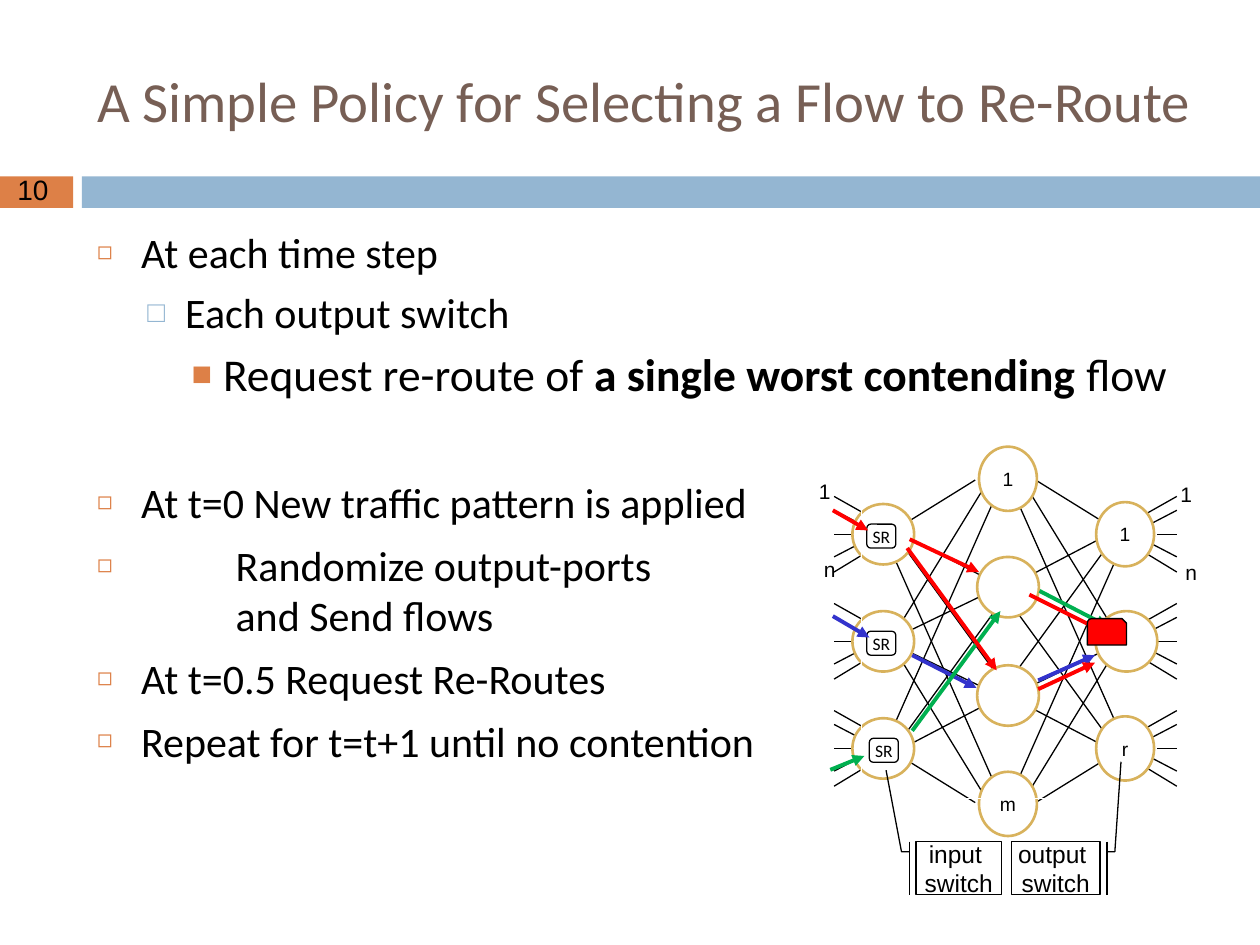
from dataclasses import dataclass
from itertools import product

from lxml.etree import SubElement
from pptx import Presentation
from pptx.dml.color import RGBColor
from pptx.enum.shapes import MSO_CONNECTOR, MSO_SHAPE
from pptx.enum.text import MSO_ANCHOR, MSO_AUTO_SIZE, PP_ALIGN
from pptx.oxml.ns import qn
from pptx.util import Inches, Pt

COLORS = {
    "black": "000000", "white": "FFFFFF", "brown": "775F55", "orange": "DD8047",
    "steel": "94B6D2", "gold": "D8B25C", "red": "FF0000", "blue": "3333CC",
    "green": "00B050",
}
AXIS_X, AXIS_Y = 7.98, 5.09
ROWS = [AXIS_Y + step * 0.85 for step in (-1, 0, 1)]


@dataclass
class Bullet:
    spans: list[tuple[str, bool]]
    left: float
    hang: float
    before: float
    mark: str = "◻"
    color: str = "orange"
    scale: int = 60
    level: int = 0
    size: float = 24


@dataclass
class Node:
    x: float
    y: float
    label: str = ""


@dataclass
class Flow:
    color: str
    start: tuple[float, float]
    end: tuple[float, float]


BULLETS = [
    Bullet([("At each time step", False)], 0.35, 0.35, 7),
    Bullet([("Each output switch", False)], 0.7, 0.3, 5.5, "□", "steel", 70, 1),
    Bullet([("Request re-route of ", False), ("a single worst contending ", True),
            ("flow", False)], 1, 0.25, 5, "■", "orange", 75, 2, 26),
    Bullet([("At t=0 New traffic pattern is applied", False)], 0.35, 0.35, 43.5),
    Bullet([("Randomize output-ports\nand Send flows", False)], 1.1, 1.1, 7),
    Bullet([("At t=0.5 Request Re-Routes", False)], 0.35, 0.35, 7),
    Bullet([("Repeat for t=t+1 until no contention", False)], 0.35, 0.35, 7),
]
PORT_LINES = [(-0.3, -0.17, 0.23), (-0.19, -0.07, 0.23), (0.3, 0.16, 0.23),
              (0.18, 0.06, 0.23), (0, 0, 0.16)]
QUARTER_LINKS = [
    (8.15, 3.87, 8.8, 4.93), (8.15, 4.72, 8.73, 5), (8.22, 3.81, 8.8, 4.17),
    (8.15, 4.58, 8.8, 4.24), (8.8, 4.32, 8.08, 5.31), (8.87, 4.41, 8.08, 6.19),
]
NODES = [
    Node(8, 3.8, "1"), Node(8, 4.66), Node(8, 5.52), Node(8, 6.38, "m"),
    *[Node(7.01, row) for row in ROWS],
    Node(8.93, ROWS[0], "1"), Node(8.94, ROWS[1]), Node(8.93, ROWS[2], "r"),
]
EARLY_FLOWS = [
    Flow("red", (6.61, 4.05), (6.89, 4.21)), Flow("blue", (6.61, 4.89), (6.9, 5.06)),
    Flow("green", (6.59, 6.11), (6.86, 6)), Flow("blue", (7.24, 5.2), (7.75, 5.46)),
    Flow("blue", (8.24, 5.4), (8.69, 5.2)), Flow("green", (7.24, 5.8), (7.94, 4.85)),
    Flow("green", (8.25, 4.69), (8.79, 4.97)), Flow("red", (7.22, 4.28), (7.77, 4.54)),
    Flow("red", (8.17, 4.72), (8.73, 5)),
]
REROUTED_FLOWS = [Flow("red", (7.2, 4.35), (7.91, 5.32)),
                  Flow("red", (8.24, 5.47), (8.69, 5.26))]


def rgb(name: str) -> RGBColor:
    return RGBColor.from_string(COLORS[name])


def write(paragraph, text: str, *, size: float, font="Arial", color="black",
          bold=False, align=None) -> None:
    if align is not None:
        paragraph.alignment = align
    for index, part in enumerate(text.split("\n")):
        if index:
            paragraph.add_line_break()
        span = paragraph.add_run()
        span.text = part
        span.font.size, span.font.name, span.font.bold = Pt(size), font, bold
        span.font.color.rgb = rgb(color)


def place(box, left: float, top: float, width: float, height: float) -> None:
    box.left, box.top = Inches(left), Inches(top)
    box.width, box.height = Inches(width), Inches(height)


def draw_shape(page, kind, left: float, top: float, width: float, height: float, *,
               fill=None, line=None, weight=0.75):
    shape = page.shapes.add_shape(kind, Inches(left), Inches(top),
                                  Inches(width), Inches(height))
    shape.shadow.inherit = False
    if fill:
        shape.fill.solid()
        shape.fill.fore_color.rgb = rgb(fill)
    else:
        shape.fill.background()
    if line:
        shape.line.color.rgb = rgb(line)
        shape.line.width = Pt(weight)
    else:
        shape.line.fill.background()
    shape.text_frame.vertical_anchor = MSO_ANCHOR.MIDDLE
    return shape


def draw_line(page, start, end, color="black", weight=0.75, arrow=False) -> None:
    line = page.shapes.add_connector(MSO_CONNECTOR.STRAIGHT,
                                     *[Inches(value) for value in (*start, *end)])
    line.line.color.rgb = rgb(color)
    line.line.width = Pt(weight)
    properties = line._element.spPr
    if arrow:
        SubElement(properties.find(qn("a:ln")), qn("a:tailEnd"), type="triangle")
    SubElement(properties, qn("a:effectLst"))


def draw_flows(page, flows: list[Flow]) -> None:
    for flow in flows:
        draw_line(page, flow.start, flow.end, flow.color, 2.25, True)


def draw_label(page, text: str, left: float, top: float, width: float,
               height: float, size: float) -> None:
    box = page.shapes.add_textbox(Inches(left), Inches(top), Inches(width), Inches(height))
    box.text_frame.word_wrap = False
    write(box.text_frame.paragraphs[0], text, size=size, align=PP_ALIGN.CENTER)


def fill_bullet(paragraph, bullet: Bullet) -> None:
    paragraph.level = bullet.level
    paragraph.space_before = Pt(bullet.before)
    properties = paragraph._p.get_or_add_pPr()
    properties.set("marL", str(Inches(bullet.left)))
    properties.set("indent", str(-Inches(bullet.hang)))
    SubElement(SubElement(properties, qn("a:buClr")), qn("a:srgbClr"),
               val=COLORS[bullet.color])
    SubElement(properties, qn("a:buSzPct"), val=str(bullet.scale * 1000))
    SubElement(properties, qn("a:buChar"), char=bullet.mark)
    for text, bold in bullet.spans:
        write(paragraph, text, size=bullet.size, font="Calibri", bold=bold)


def draw_text(page) -> None:
    title, body = page.shapes.title, page.placeholders[1]
    place(title, 0.67, 0.25, 8.92, 1.08)
    place(body, 0.67, 1.75, 8.92, 5.28)
    for box in (title, body):
        box.text_frame.auto_size = MSO_AUTO_SIZE.NONE
    title.text_frame.vertical_anchor = MSO_ANCHOR.MIDDLE
    write(title.text_frame.paragraphs[0], "A Simple Policy for Selecting a Flow to Re-Route",
          size=32.4, font="Calibri", color="brown", align=PP_ALIGN.LEFT)
    frame = body.text_frame
    for index, bullet in enumerate(BULLETS):
        fill_bullet(frame.add_paragraph() if index else frame.paragraphs[0], bullet)


def draw_network(page) -> None:
    for side, row in product((-1, 1), ROWS):
        outer = AXIS_X + side * 1.36
        for outer_y, inner_y, length in PORT_LINES:
            draw_line(page, (outer, row + outer_y), (outer - side * length, row + inner_y))
    for mirror_x, mirror_y in product((False, True), repeat=2):
        for link in QUARTER_LINKS:
            x1, x2 = [2 * AXIS_X - x if mirror_x else x for x in link[::2]]
            y1, y2 = [2 * AXIS_Y - y if mirror_y else y for y in link[1::2]]
            draw_line(page, (x1, y1), (x2, y2))
    for node in NODES:
        width, height = (0.46, 0.51) if node.label else (0.49, 0.48)
        circle = draw_shape(page, MSO_SHAPE.OVAL, node.x - width / 2, node.y - height / 2,
                            width, height, fill="white", line="gold", weight=1.5)
        if node.label:
            write(circle.text_frame.paragraphs[0], node.label, size=11, align=PP_ALIGN.CENTER)
    for left, row in zip((6.88, 6.88, 6.9), ROWS):
        router = draw_shape(page, MSO_SHAPE.ROUNDED_RECTANGLE, left, row - 0.08, 0.23, 0.19,
                            fill="white", line="black")
        router.text_frame.margin_left = router.text_frame.margin_right = 0
        write(router.text_frame.paragraphs[0], "SR", size=10, font="Calibri",
              align=PP_ALIGN.CENTER)
    draw_shape(page, MSO_SHAPE.RECTANGLE, 6.84, 2.5, 2.97, 3.84, line="white")
    for left, top in ((9.27, 3.77), (6.4, 3.75)):
        draw_label(page, "1", left, top, 0.27, 0.29, 12)
        draw_label(page, "n", left + 0.04, top + 0.62, 0.2, 0.29, 12)


def draw_callout(page, words: list[str], left: float, width: float,
                 tip: tuple[float, float], flip: bool) -> None:
    callout = draw_shape(page, MSO_SHAPE.LINE_CALLOUT_2_BORDER_AND_ACCENT_BAR,
                         left, 6.68, width, 0.42, line="black")
    for index, value in enumerate((0.19, -0.08, 0.19, -0.17, *tip)):
        callout.adjustments[index] = value
    if flip:
        callout._element.spPr.xfrm.set("flipH", "1")
    frame = callout.text_frame
    frame.word_wrap = False
    for index, word in enumerate(words):
        write(frame.add_paragraph() if index else frame.paragraphs[0], word,
              size=14, align=PP_ALIGN.CENTER)


def main() -> None:
    deck = Presentation()
    deck.slide_width, deck.slide_height = Inches(10), Inches(7.5)
    page = deck.slides.add_slide(deck.slide_layouts[1])
    draw_shape(page, MSO_SHAPE.RECTANGLE, 0, 1.4, 0.58, 0.25, fill="orange")
    draw_shape(page, MSO_SHAPE.RECTANGLE, 0.65, 1.4, 9.35, 0.25, fill="steel")
    draw_label(page, "10", 0.02, 1.32, 0.48, 0.37, 16)
    draw_text(page)
    draw_network(page)
    draw_callout(page, ["input ", "switch"], 7.27, 0.68, (-1.35, -0.35), False)
    draw_callout(page, ["output ", "switch"], 8.03, 0.7, (-1.51, -0.24), True)
    draw_flows(page, EARLY_FLOWS)
    draw_shape(page, MSO_SHAPE.SNIP_ROUND_RECTANGLE, 8.63, 4.91, 0.31, 0.21,
               fill="red", line="black")
    draw_flows(page, REROUTED_FLOWS)
    deck.save("out.pptx")


if __name__ == "__main__":
    main()
